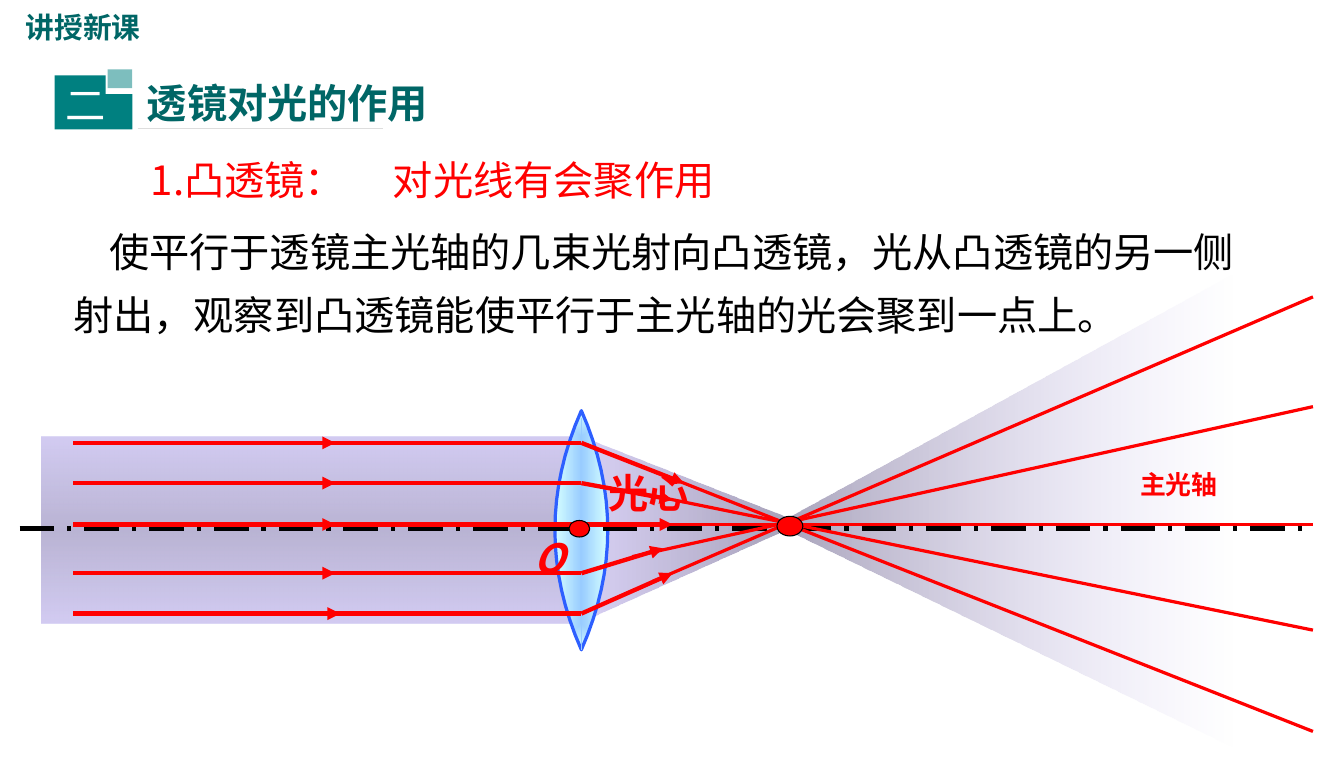
from pptx import Presentation
from pptx.util import Pt
from pptx.dml.color import RGBColor
from pptx.enum.dml import MSO_LINE
from pptx.enum.shapes import MSO_CONNECTOR, MSO_SHAPE
from pptx.enum.text import MSO_ANCHOR, MSO_AUTO_SIZE, PP_ALIGN
from pptx.oxml.ns import qn
from lxml import etree

LEFT, MID = PP_ALIGN.LEFT, PP_ALIGN.CENTER
TOP, FIT = MSO_ANCHOR.TOP, MSO_AUTO_SIZE.SHAPE_TO_FIT_TEXT
RECT, OVAL, CONE = MSO_SHAPE.RECTANGLE, MSO_SHAPE.OVAL, MSO_SHAPE.ISOSCELES_TRIANGLE
DASH = MSO_LINE.LONG_DASH_DOT
STRAIGHT = MSO_CONNECTOR.STRAIGHT
FONT = "Noto Sans CJK SC"
HUE = {"red": "FF0000", "black": "000000", "white": "FFFFFF", "teal": "008080",
       "deep": "006666", "grey": "DDDDDD", "edge": "2D5FFF", "sky": "99CCFF"}

deck = Presentation()
deck.slide_width, deck.slide_height = Pt(935.3), Pt(538.6)
slide = deck.slides.add_slide(deck.slide_layouts[5])
shapes = slide.shapes


def tint(name):
    return RGBColor.from_string(HUE[name])


def write(text, box, size=28, color="red", bold=False, italic=False, font=FONT,
          align=LEFT, wrap=True, space=1, indent=0, shape=None):
    x, y, w, h = map(Pt, box)
    if shape is None:
        shape = shapes.add_textbox(x, y, w, h)
    shape.left, shape.top, shape.width, shape.height = x, y, w, h
    frame = shape.text_frame
    frame.word_wrap, frame.auto_size, frame.vertical_anchor = wrap, FIT, TOP
    para = frame.paragraphs[0]
    para.alignment, para.line_spacing = align, space
    if indent:
        para._p.get_or_add_pPr().set("indent", str(Pt(indent)))
    run = para.add_run()
    run.text = text
    run.font.size, run.font.bold, run.font.italic = Pt(size), bold, italic
    run.font.name = font
    run.font.color.rgb = tint(color)
    etree.SubElement(run._r.rPr, qn("a:ea")).set("typeface", FONT)


# Light beams: box, rotation, apex, gradient stops (position, colour, opacity)
glows = []
for kind, box, turn, apex, stops in [
    (CONE, (415.4, 290.9, 130.3, 154.8), 90, 0.467,
     [(0, "6D6589", 62), (100, "BEB1EF", 59)]),
    (CONE, (534.2, 195.1, 331.2, 320.4), 270, 0.471,
     [(0, "736B90", 63), (100, "BEB1EF", 0)]),
    (RECT, (28.8, 303.8, 375.8, 130.3), 0, None,
     [(0, "C3BAEE", 73), (50, "A199C4", 73), (100, "C3BAEE", 73)]),
]:
    beam = shapes.add_shape(kind, *map(Pt, box))
    beam.rotation = turn
    if apex:
        beam.adjustments[0] = apex
    beam.line.fill.background()
    glows.append((beam, stops))

# Lens with two parabolic sides
mid, axis, half, bulge, steps = 404.6, 369, 83.2, 18.4, 16
marks = [2 * i / steps - 1 for i in range(steps + 1)]
sides = [(mid - bulge * (1 - t * t), axis + half * t) for t in marks]
sides += [(mid + bulge * (1 - t * t), axis - half * t) for t in marks]
pen = shapes.build_freeform(Pt(sides[0][0]), Pt(sides[0][1]))
pen.add_line_segments([(Pt(x), Pt(y)) for x, y in sides[1:]])
lens = pen.convert_to_shape()
lens.line.color.rgb, lens.line.width = tint("edge"), Pt(2.25)
glows.append((lens, [(0, "99CCFF", 100), (100, "D5FFFF", 100)]))

# Gradients
for shape, stops in glows:
    shape.shadow.inherit = False
    shape.fill.gradient()
    grad = shape._element.spPr.find(qn("a:gradFill"))
    for child in list(grad):
        grad.remove(child)
    group = etree.SubElement(grad, qn("a:gsLst"))
    for place, color, alpha in stops:
        stop = etree.SubElement(group, qn("a:gs"), pos=str(place * 1000))
        value = etree.SubElement(stop, qn("a:srgbClr"), val=color)
        etree.SubElement(value, qn("a:alpha"), val=str(alpha * 1000))
    if shape is lens:
        way = etree.SubElement(grad, qn("a:path"), path="shape")
        etree.SubElement(way, qn("a:fillToRect"),
                         **dict.fromkeys("ltrb", "50000"))
    else:
        etree.SubElement(grad, qn("a:lin"), ang="5400000", scaled="0")

# Section badge
pen = shapes.build_freeform(Pt(38), Pt(52.5))
pen.add_line_segments([(Pt(x), Pt(y)) for x, y in [
    (73.5, 52.5), (73.5, 65.5), (92.2, 65.5), (92.2, 90), (38, 90)]])
badge = pen.convert_to_shape()
chip = shapes.add_shape(RECT, Pt(75), Pt(48.3), Pt(17), Pt(13))
for part in (badge, chip):
    part.shadow.inherit = False
    part.fill.solid()
    part.fill.fore_color.rgb = tint("teal")
    part.line.fill.background()
value = chip._element.spPr.find(qn("a:solidFill"))[0]
etree.SubElement(value, qn("a:alpha"), val="51000")

# Wording
write("透镜对光的作用", (95, 51.1, 212.4, 41), color="deep", bold=True,
      wrap=False, shape=shapes.title)
write("二", (38.2, 52.5, 56.9, 41), color="white")
write("讲授新课", (10.8, 3.6, 132.5, 31.7), size=20, color="deep", bold=True,
      font="Arial")
write("1.凸透镜：", (28.8, 104.4, 287.3, 41), align=MID)
write("对光线有会聚作用", (266.4, 104.4, 471.6, 41))
write("使平行于透镜主光轴的几束光射向凸透镜，光从凸透镜的另一侧射出，"
      "观察到凸透镜能使平行于主光轴的光会聚到一点上。",
      (43.9, 144.7, 836.6, 95.8), color="black", space=1.3, indent=25)
write("主光轴", (732.2, 322.6, 176.4, 28.8), size=18, bold=True, align=MID)
write("光心", (367.2, 322.6, 167.8, 41), bold=True, align=MID)
write("O", (353.5, 367.9, 56.9, 41), bold=True, italic=True, align=MID)

# Lines: start, end, colour, width, arrow
lines = [
    (95.8, 89.3, 266.4, 89.3, "grey", 1, False),
    (mid, 290.9, mid, 452.2, "sky", 1, False),
    (13.7, 367.9, 913, 367.9, "black", 3, False),
]
for y, tip, x2, y2 in [
    (308.2, 233.3, 476, 336.2), (336.2, 233.3, 468, 347.8),
    (365, 233.3, 468, 365), (398.9, 233.3, 461.5, 381.6),
    (427, 236.9, 468, 398.9),
]:
    lines += [(226.8, y, mid, y, "red", 3, False),
              (51, y, tip, y, "red", 3, True),
              (mid, y, x2, y2, "red", 3, True)]
for x, y, end in [(454.3, 404.6, 206.6), (439.9, 387.4, 283), (439.9, 365, 365),
                  (439.9, 342, 438.5), (461.5, 330.5, 509)]:
    lines.append((x, y, 913.7, end, "red", 2.25, False))

for *ends, color, width, arrow in lines:
    ray = shapes.add_connector(STRAIGHT, *map(Pt, ends))
    ray.line.color.rgb, ray.line.width = tint(color), Pt(width)
    if color == "black":
        ray.line.dash_style = DASH
    if arrow:
        etree.SubElement(ray.line._get_or_add_ln(), qn("a:tailEnd"), type="triangle")
    etree.SubElement(ray._element.spPr, qn("a:effectLst"))

# Optical centre and focus
for box in [(396, 362.2, 14.4, 11.5), (540.7, 359.3, 18, 13.7)]:
    dot = shapes.add_shape(OVAL, *map(Pt, box))
    dot.shadow.inherit = False
    dot.fill.solid()
    dot.fill.fore_color.rgb = tint("red")
    dot.line.color.rgb, dot.line.width = tint("black"), Pt(0.75)

deck.save("out.pptx")
